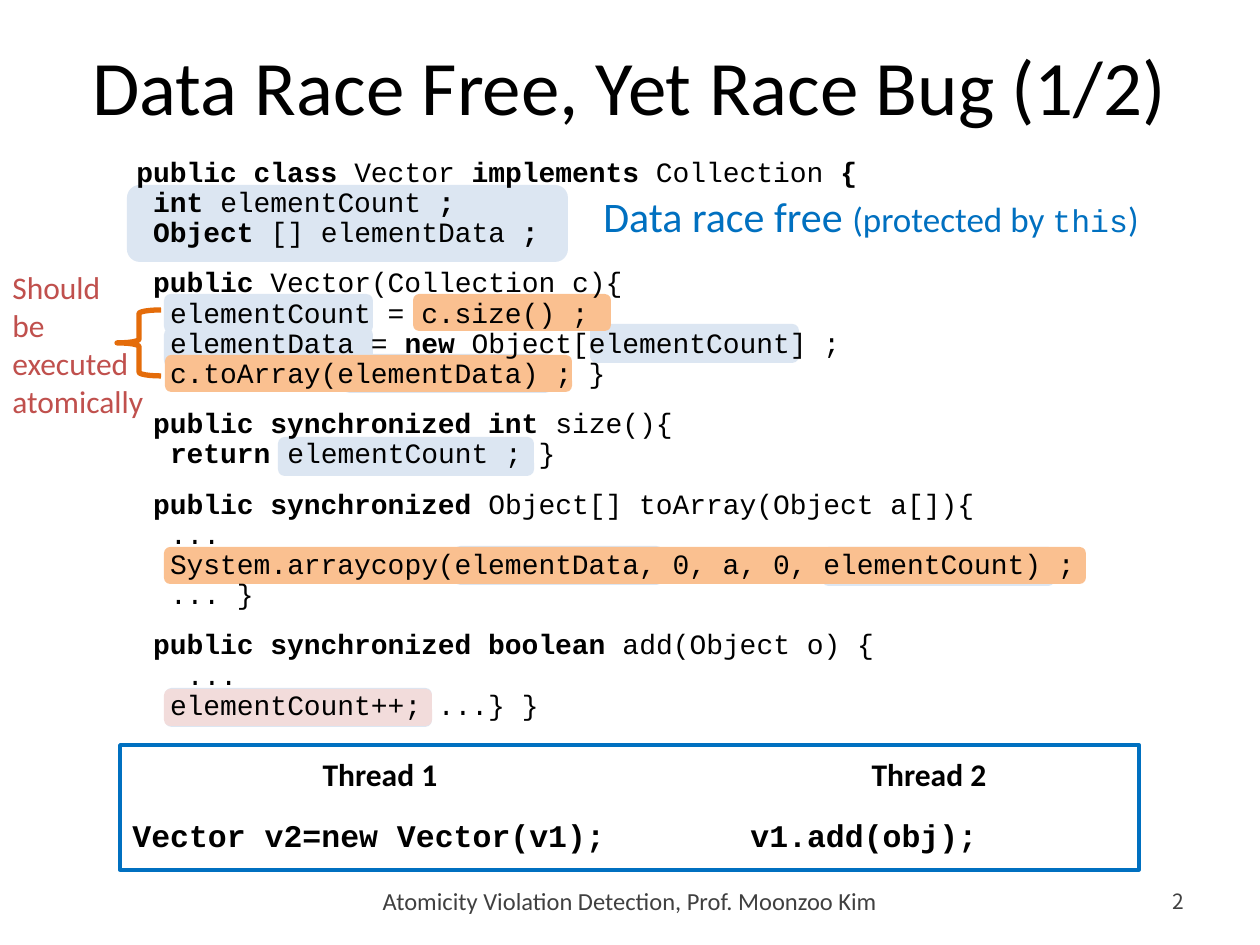
from pptx import Presentation
from pptx import util as u
from pptx.dml import color
from pptx.enum import shapes, text

EMU_PER_PX = 914400 / 126
BLACK, GREY, BLUE, RED, ORANGE = "000000", "404040", "0070C0", "C0504D", "E46C0A"
SHARED, ATOMIC, UPDATE = "DCE6F2", "FAC090", "F2DCDB"
SANS, MONO = "Calibri", "Courier New"
LEFT, CENTER, RIGHT = text.PP_ALIGN.LEFT, text.PP_ALIGN.CENTER, text.PP_ALIGN.RIGHT
TOP, MIDDLE = text.MSO_ANCHOR.TOP, text.MSO_ANCHOR.MIDDLE

HIGHLIGHTS = [
    (SHARED, [(454, 546, 209, 39), (590, 324, 209, 39), (343, 354, 209, 39),
              (164, 328, 209, 39), (164, 294, 209, 39), (165, 688, 267, 39),
              (822, 547, 233, 39), (278, 437, 256, 39), (127, 185, 441, 77)]),
    (UPDATE, [(164, 689, 268, 37)]),
    (ATOMIC, [(164, 547, 922, 37), (413, 294, 198, 37), (165, 355, 407, 37)]),
]

CODE = [
    [(0, "**public class **Vector **implements** Collection** {**"),
     (1, "**int **elementCount** ;**"),
     (1, "**Object **[] elementData** ;**")],
    [(1, "**public** Vector(Collection c){"),
     (2, "elementCount = c.size() ;"),
     (2, "elementData = **new** Object[elementCount] ;"),
     (2, "c.toArray(elementData) ; }")],
    [(1, "**public synchronized int** size(){"),
     (2, "**return **elementCount ; }")],
    [(1, "**public synchronized** Object[] toArray(Object a[]){"),
     (2, "..."),
     (2, "System.arraycopy(elementData, 0, a, 0, elementCount) ;"),
     (2, "... }")],
    [(1, "**public synchronized boolean** add(Object o) {"),
     (3, "..."),
     (2, "elementCount++; ...} }")],
]


def px(length):
    return u.Emu(round(length * EMU_PER_PX))


def rgb(hex_value):
    return color.RGBColor.from_string(hex_value)


def add_run(paragraph, words, size, font=SANS, ink=BLACK, bold=False):
    run = paragraph.add_run()
    run.text = words
    run.font.size = u.Pt(size)
    run.font.name = font
    run.font.bold = bold
    run.font.color.rgb = rgb(ink)


def add_text_frame(slide, box, anchor=TOP):
    frame = slide.shapes.add_textbox(*map(px, box)).text_frame
    frame.word_wrap = True
    frame.vertical_anchor = anchor
    return frame


def next_paragraph(frame, align=LEFT):
    first = frame.paragraphs[0]
    paragraph = frame.add_paragraph() if first.runs else first
    paragraph.alignment = align
    return paragraph


def indent(paragraph, length):
    properties = paragraph._p.get_or_add_pPr()
    properties.set("marL", str(px(length)))
    properties.set("indent", "0")


def add_shape(slide, kind, box, fill=None, line=None, width=0):
    shape = slide.shapes.add_shape(kind, *map(px, box))
    shape.shadow.inherit = False
    if fill:
        shape.fill.solid()
        shape.fill.fore_color.rgb = rgb(fill)
    else:
        shape.fill.background()
    if line:
        shape.line.color.rgb = rgb(line)
        shape.line.width = u.Pt(width)
    else:
        shape.line.fill.background()


def add_title(slide, words):
    title = slide.shapes.title
    title.left, title.top, title.width, title.height = map(px, (63, 6, 1134, 158))
    title.text_frame.vertical_anchor = MIDDLE
    paragraph = title.text_frame.paragraphs[0]
    paragraph.alignment = CENTER
    add_run(paragraph, words, 44)


def add_label(slide, box, lines, size, ink, align=LEFT, font=SANS, anchor=TOP):
    frame = add_text_frame(slide, box, anchor)
    for line in lines:
        add_run(next_paragraph(frame, align), line, size, font, ink)


def add_code(slide):
    frame = add_text_frame(slide, (124, 152, 1012, 588))
    for block_index, block in enumerate(CODE):
        for line_index, (level, line) in enumerate(block):
            paragraph = next_paragraph(frame)
            paragraph.line_spacing = 0.9
            if block_index and not line_index:
                paragraph.space_before = u.Pt(11.4)
            indent(paragraph, level * 16.8)
            for part_index, part in enumerate(line.split("**")):
                if part:
                    add_run(paragraph, part, 16, MONO, bold=part_index % 2 == 1)


def add_thread(slide, box, name, call, call_indent=0):
    frame = add_text_frame(slide, box)
    add_run(next_paragraph(frame, CENTER), name, 18, bold=True)
    statement = next_paragraph(frame)
    statement.space_before = u.Pt(13)
    indent(statement, call_indent)
    add_run(statement, call, 18, MONO, bold=True)


def add_race_note(slide):
    paragraph = next_paragraph(add_text_frame(slide, (591, 184, 595, 63)))
    add_run(paragraph, "Data race free ", 24, ink=BLUE)
    add_run(paragraph, "(protected by ", 20, ink=BLUE)
    add_run(paragraph, "this", 18, MONO, BLUE)
    add_run(paragraph, ")", 20, ink=BLUE)


def main():
    deck = Presentation()
    deck.slide_width, deck.slide_height = px(1260), px(945)
    slide = deck.slides.add_slide(deck.slide_layouts[5])
    preset = shapes.MSO_SHAPE

    for fill, boxes in HIGHLIGHTS:
        for box in boxes:
            add_shape(slide, preset.ROUNDED_RECTANGLE, box, fill)
    add_title(slide, "Data Race Free, Yet Race Bug (1/2)")
    add_label(slide, (202, 876, 856, 50),
              ["Atomicity Violation Detection, Prof. Moonzoo Kim"],
              14, GREY, CENTER, anchor=MIDDLE)
    add_label(slide, (1126, 876, 71, 50), ["2"], 12, GREY, RIGHT,
              "Noto Sans CJK KR", MIDDLE)
    add_code(slide)
    add_thread(slide, (120, 749, 520, 112), "Thread 1", "Vector v2=new Vector(v1);")
    add_thread(slide, (719, 749, 420, 112), "Thread 2", "v1.add(obj);", 19)
    add_shape(slide, preset.RECTANGLE, (120, 745, 1019, 125), line=BLUE, width=2)
    add_race_note(slide)
    add_shape(slide, preset.LEFT_BRACE, (117, 310, 44, 66), line=ORANGE, width=3)
    add_label(slide, (0, 262, 318, 165),
              ["Should", "be", "executed", "atomically"], 18, RED)
    deck.save("out.pptx")


if __name__ == "__main__":
    main()
